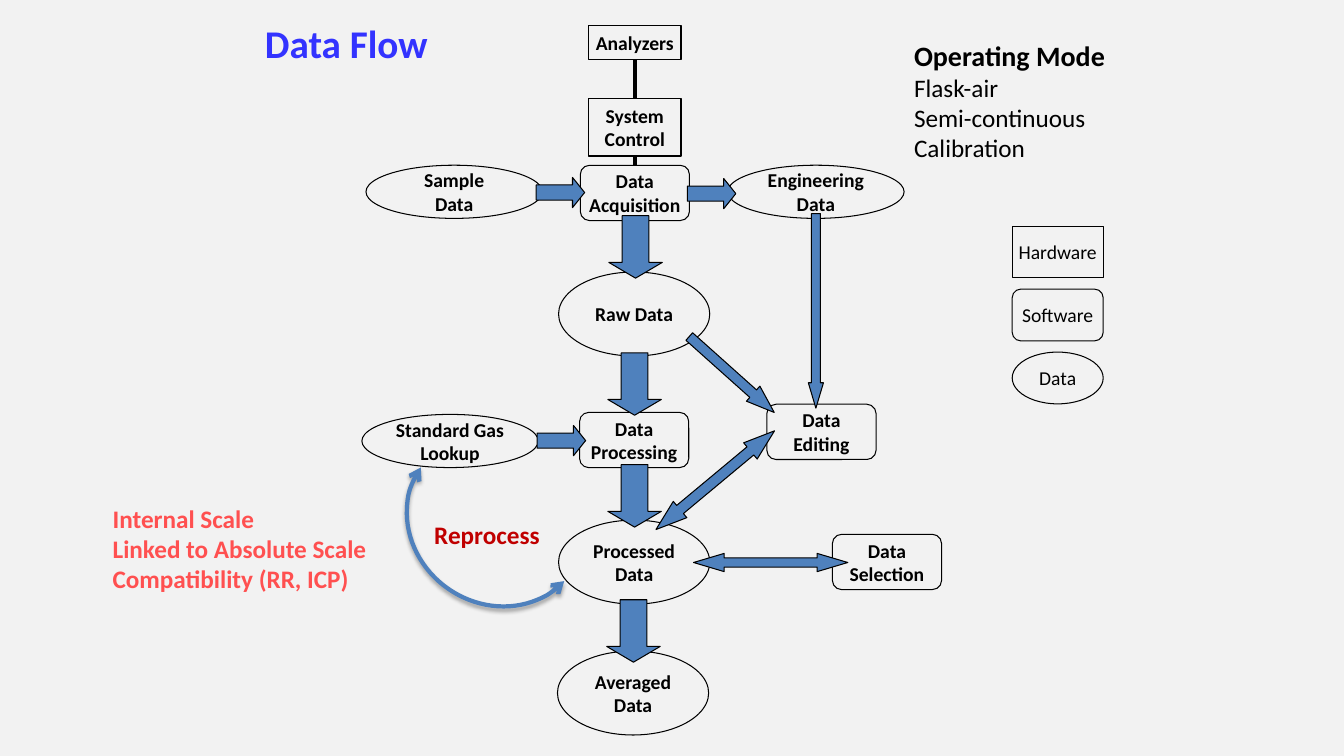
from lxml import etree
from pptx import Presentation
from pptx.dml.color import RGBColor
from pptx.enum import shapes, text
from pptx.oxml import ns
from pptx.util import Pt

FONT = "Calibri"
BLACK = RGBColor(0, 0, 0)
PALE_GREY = RGBColor(0xF2, 0xF2, 0xF2)
TITLE_BLUE = RGBColor(0x33, 0x33, 0xFF)
ARROW_BLUE = RGBColor(0x4F, 0x81, 0xBD)
CORAL = RGBColor(0xFF, 0x50, 0x50)
DARK_RED = RGBColor(0xC0, 0, 0)

KIND = shapes.MSO_SHAPE
HARDWARE, SOFTWARE, DATA = KIND.RECTANGLE, KIND.ROUNDED_RECTANGLE, KIND.OVAL
STEP = (78, 39.5)
STORE = (108, 60)
WIDE_STORE = (126, 38)
AXIS = 195.5

NODES = [
    ("System\nControl", HARDWARE, AXIS, 73, (66, 41)),
    ("Data\nProcessing", SOFTWARE, 195, 296.3, STEP),
    ("Averaged\nData", DATA, 194.2, 477, STORE),
    ("Analyzers", HARDWARE, AXIS, 12.5, (66, 24)),
    ("Standard Gas\nLookup", DATA, 63.5, 297, WIDE_STORE),
    ("Engineering\nData", DATA, 324.8, 119, WIDE_STORE),
    ("Sample\nData", DATA, 66.4, 119, WIDE_STORE),
    ("Data\nAcquisition", SOFTWARE, AXIS, 119.8, STEP),
    ("Data\nEditing", SOFTWARE, 328.8, 290.5, STEP),
    ("Data\nSelection", SOFTWARE, 375.6, 383.4, STEP),
    ("Processed\nData", DATA, 195, 383.5, STORE),
    ("Raw Data", DATA, 195, 206.3, STORE),
]
LINKS = [("Analyzers", "System\nControl"), ("System\nControl", "Data\nAcquisition")]

DOWN, BOTH_WAYS = KIND.DOWN_ARROW, KIND.LEFT_RIGHT_ARROW
MAIN = (DOWN, (38.2, 44.6), (0.5, 0.294), 0)
SIDE = (DOWN, (21.6, 34.6), (0.5, 0.401), 270)
ARROWS = [
    (195.3, 256.3, MAIN),
    (195.3, 336.2, MAIN),
    (194.5, 432.7, MAIN),
    (324.8, 204.1, (DOWN, (10.8, 139), (0.59, 1.681), 0)),
    (264.7, 249.5, (DOWN, (14.4, 81.4), (0.5, 1.401), 311.8)),
    (292.5, 383.8, (BOTH_WAYS, (110.2, 13), (0.5, 1.682), 0)),
    (143, 296.7, SIDE),
    (142.3, 119.5, SIDE),
    (250.3, 120.3, SIDE),
    (196, 158.4, MAIN),
    (252.9, 325, (BOTH_WAYS, (110.2, 15.1), (0.5, 1.484), 320.2)),
]


def format_text(paragraphs, size, color, bold, align=None):
    for para in paragraphs:
        para.alignment = align
        for span in para.runs:
            span.font.name = FONT
            span.font.size = Pt(size)
            span.font.bold = bold
            span.font.color.rgb = color


def add_centred(page, kind, x, y, size, color=BLACK, weight=0.75):
    width, height = size
    shape = page.shapes.add_shape(
        kind, Pt(x - width / 2), Pt(y - height / 2), Pt(width), Pt(height))
    shape.shadow.inherit = False
    shape.fill.background()
    shape.line.color.rgb = color
    shape.line.width = Pt(weight)
    return shape


def add_node(page, label, kind, x, y, size, bold=True):
    node = add_centred(page, kind, x, y, size)
    frame = node.text_frame
    frame.text = label
    frame.word_wrap = False
    frame.vertical_anchor = text.MSO_ANCHOR.MIDDLE
    format_text(frame.paragraphs, 14, BLACK, bold, text.PP_ALIGN.CENTER)
    return node


def add_arrow(page, x, y, style):
    kind, size, adjustments, rotation = style
    arrow = add_centred(page, kind, x, y, size)
    arrow.fill.solid()
    arrow.fill.fore_color.rgb = ARROW_BLUE
    arrow.rotation = rotation
    for index, value in enumerate(adjustments):
        arrow.adjustments[index] = value


def add_link(page, upper, lower):
    link = page.shapes.add_connector(shapes.MSO_CONNECTOR.STRAIGHT, 0, 0, 0, 0)
    link.begin_connect(upper, 2)
    link.end_connect(lower, 0)
    link.line.color.rgb = BLACK
    link.line.width = Pt(3)
    etree.SubElement(link._element.spPr, ns.qn("a:effectLst"))


def add_reprocess_arc(page, x, y):
    arc = add_centred(page, KIND.ARC, x, y, (119.5, 131), ARROW_BLUE, 3)
    arc.rotation = 305
    arc.adjustments[0] = 162
    arc.adjustments[1] = 49.914
    props = arc._element.spPr
    props.find(ns.qn("a:xfrm")).set("flipH", "1")
    for end in ("a:headEnd", "a:tailEnd"):
        etree.SubElement(props.find(ns.qn("a:ln")), ns.qn(end), type="arrow")
    shadow = etree.SubElement(
        props.find(ns.qn("a:effectLst")), ns.qn("a:outerShdw"),
        blurRad=str(Pt(3.1)), dist=str(Pt(1.8)), dir="5400000", rotWithShape="0")
    shade = etree.SubElement(shadow, ns.qn("a:srgbClr"), val=str(BLACK))
    etree.SubElement(shade, ns.qn("a:alpha"), val="35000")


def add_title(page, left, top, width, height):
    title = page.shapes.title
    title.left, title.top, title.width, title.height = map(Pt, (left, top, width, height))
    frame = title.text_frame
    frame.text = "Data Flow"
    frame.auto_size = text.MSO_AUTO_SIZE.NONE
    frame.vertical_anchor = text.MSO_ANCHOR.MIDDLE
    format_text(frame.paragraphs, 28, TITLE_BLUE, True, text.PP_ALIGN.CENTER)


def add_note(page, label, color, left, top, width, height, wrap=False):
    box = page.shapes.add_textbox(Pt(left), Pt(top), Pt(width), Pt(height))
    frame = box.text_frame
    frame.text = label
    frame.word_wrap = wrap
    frame.auto_size = text.MSO_AUTO_SIZE.SHAPE_TO_FIT_TEXT
    format_text(frame.paragraphs, 18, color, True)
    return frame


def add_operating_mode(page, left, top, width, height):
    label = "Operating Mode\nFlask-air\nSemi-continuous\nCalibration"
    heading, *modes = add_note(page, label, BLACK, left, top, width, height).paragraphs
    format_text([heading], 20, BLACK, True)
    format_text(modes, 18, BLACK, False)


def add_flow(page, left, top):
    nodes = {}
    for label, kind, x, y, size in NODES:
        nodes[label] = add_node(page, label, kind, left + x, top + y, size)
    for upper, lower in LINKS:
        add_link(page, nodes[upper], nodes[lower])
    for x, y, style in ARROWS:
        add_arrow(page, left + x, top + y, style)
    add_reprocess_arc(page, left + 96.2, top + 353.5)
    add_note(page, "Reprocess", DARK_RED, left + 45.1, top + 349.2, 95.8, 28.8, True)


def add_legend(page, left, top, width, pitch):
    entries = [("Hardware", HARDWARE), ("Software", SOFTWARE), ("Data", DATA)]
    for row, (label, kind) in enumerate(entries):
        y = top + pitch * (row + 0.5)
        add_node(page, label, kind, left + width / 2, y, (width, 37), bold=False)


def main():
    deck = Presentation()
    deck.slide_width, deck.slide_height = Pt(960), Pt(540)
    page = deck.slides.add_slide(deck.slide_layouts[5])
    page.background.fill.solid()
    page.background.fill.fore_color.rgb = PALE_GREY
    add_title(page, 128.9, 14.4, 236.9, 31.7)
    add_flow(page, 258, 18)
    add_note(page, "Internal Scale\nLinked to Absolute Scale\nCompatibility (RR, ICP)",
             CORAL, 73.4, 355.7, 197.3, 72.7)
    add_legend(page, 723, 157.5, 65, 45)
    add_operating_mode(page, 645.8, 23.8, 151.9, 97.2)
    deck.save("out.pptx")


if __name__ == "__main__":
    main()
